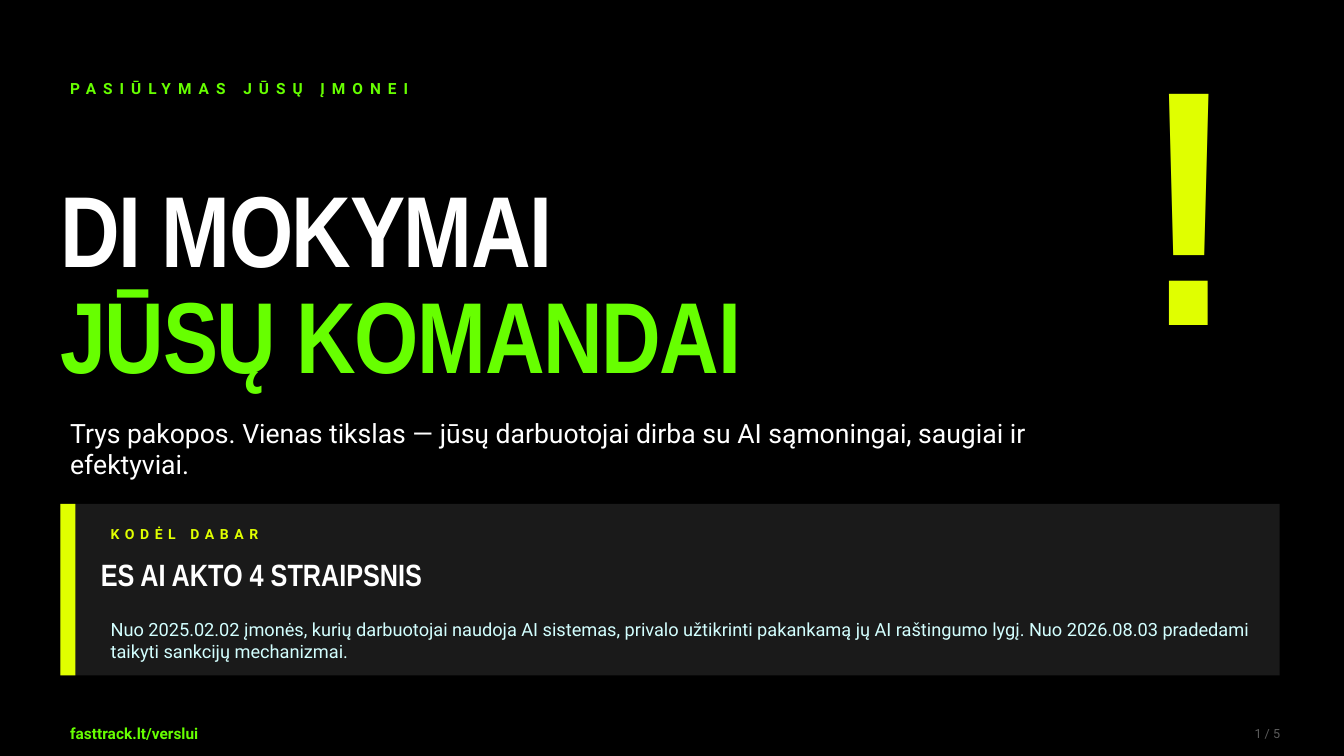
"""Build the opening slide of an AI training offer."""
from pptx import Presentation
from pptx.dml.color import RGBColor
from pptx.enum.shapes import MSO_SHAPE
from pptx.enum.text import MSO_ANCHOR, PP_ALIGN
from pptx.util import Cm, Pt

RECT = MSO_SHAPE.RECTANGLE
MIDDLE = MSO_ANCHOR.MIDDLE
LEFT, CENTER, RIGHT = PP_ALIGN.LEFT, PP_ALIGN.CENTER, PP_ALIGN.RIGHT

COLORS = {
    "black": "000000", "white": "FFFFFF", "green": "67FF00", "lime": "E0FF00",
    "panel": "1A1A1A", "ice": "D3FFFF", "gray": "5C5C5C",
}
HEAD, BODY = "Arial Narrow", "Roboto"
EDGE, INNER = 1.52, 2.54
CARD_TOP, CARD_TALL = 12.7, 4.32
FOOT_TOP, FOOT_TALL = 18.16, 0.64

CARD = [
    ((EDGE, CARD_TOP, 30.73, CARD_TALL), "panel"),
    ((EDGE, CARD_TOP, 0.38, CARD_TALL), "lime"),
]

# text, box, font, size, color, bold, spacing, alignment
TEXTS = [
    ("!", (27.43, 0.76, 5.08, 8.13), HEAD, 240, "lime", True, 0, CENTER),
    ("PASIŪLYMAS JŪSŲ ĮMONEI", (EDGE, 1.78, 17.78, 0.89),
     BODY, 11, "green", True, 5, LEFT),
    ("DI MOKYMAI", (EDGE, 4.32, 25.4, 2.79), HEAD, 72, "white", True, -1, LEFT),
    ("JŪSŲ KOMANDAI", (EDGE, 6.99, 25.4, 2.79),
     HEAD, 72, "green", True, -1, LEFT),
    ("Trys pakopos. Vienas tikslas — jūsų darbuotojai dirba su AI sąmoningai, "
     "saugiai ir efektyviai.", (EDGE, 10.41, 25.4, 1.78),
     BODY, 19, "white", False, 0, LEFT),
    ("KODĖL DABAR", (INNER, 13.08, 15.24, 0.76),
     BODY, 10, "lime", True, 4, LEFT),
    ("ES AI AKTO 4 STRAIPSNIS", (INNER, 13.84, 29.21, 1.27),
     HEAD, 22, "white", True, 0, LEFT),
    ("Nuo 2025.02.02 įmonės, kurių darbuotojai naudoja AI sistemas, privalo "
     "užtikrinti pakankamą jų AI raštingumo lygį. Nuo 2026.08.03 pradedami "
     "taikyti sankcijų mechanizmai.", (INNER, 15.24, 29.21, 1.78),
     BODY, 13, "ice", False, 0, LEFT),
    ("fasttrack.lt/verslui", (EDGE, FOOT_TOP, 15.24, FOOT_TALL),
     BODY, 11, "green", True, 0, LEFT),
    ("1 / 5", (30.48, FOOT_TOP, 2.03, FOOT_TALL),
     BODY, 9, "gray", False, 0, RIGHT),
]


def tint(name):
    """Return the named color."""
    return RGBColor.from_string(COLORS[name])


def add_block(slide, box, color):
    """Add a plain filled rectangle."""
    block = slide.shapes.add_shape(RECT, *map(Cm, box))
    block.shadow.inherit = False
    block.fill.solid()
    block.fill.fore_color.rgb = tint(color)
    block.line.fill.background()


def add_text(slide, text, box, face, size, color, bold, gap, align):
    """Add one line or paragraph of text; headings have no insets."""
    frame = slide.shapes.add_textbox(*map(Cm, box)).text_frame
    frame.word_wrap = True
    frame.vertical_anchor = MIDDLE
    if face == HEAD:
        frame.margin_left = frame.margin_right = 0
        frame.margin_top = frame.margin_bottom = 0
    para = frame.paragraphs[0]
    para.alignment = align
    run = para.add_run()
    run.text = text
    font = para.font
    font.name, font.size, font.bold = face, Pt(size), bold
    font.color.rgb = tint(color)
    if gap:
        run._r.get_or_add_rPr().set("spc", str(gap * 100))


def main():
    """Build and save the slide."""
    deck = Presentation()
    deck.slide_width, deck.slide_height = Cm(33.87), Cm(19.05)
    slide = deck.slides.add_slide(deck.slide_layouts[6])
    back = slide.background.fill
    back.solid()
    back.fore_color.rgb = tint("black")
    for box, color in CARD:
        add_block(slide, box, color)
    for item in TEXTS:
        add_text(slide, *item)
    deck.save("out.pptx")


if __name__ == "__main__":
    main()
